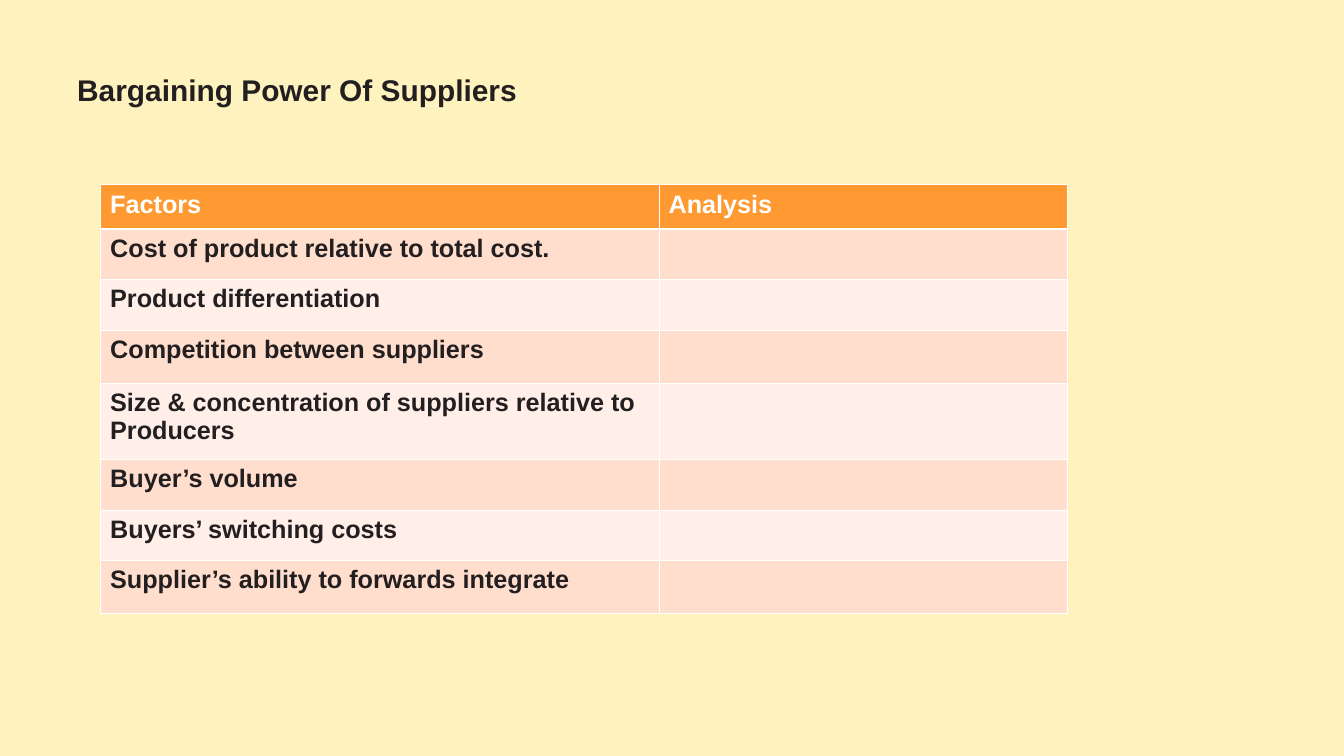
from dataclasses import dataclass

from lxml.etree import SubElement
from pptx import Presentation
from pptx.dml.color import RGBColor
from pptx.enum.text import MSO_ANCHOR
from pptx.oxml.ns import qn
from pptx.util import Inches, Pt

TITLE = "Bargaining Power Of Suppliers"
HEADERS = ("Factors", "Analysis")
FACTORS = [
    "Cost of product relative to total cost.",
    "Product differentiation",
    "Competition between suppliers",
    "Size & concentration of suppliers relative to Producers",
    "Buyer’s volume",
    "Buyers’ switching costs",
    "Supplier’s ability to forwards integrate",
]
COLUMN_WIDTHS = (8.31, 6.08)
ROW_HEIGHTS = (0.66, 0.75, 0.75, 0.79, 1.14, 0.75, 0.75, 0.79)
TITLE_AREA = (1.05, 1.04, 17.84, 0.62)
TABLE_ORIGIN = (1.5, 2.75)


@dataclass(frozen=True)
class Theme:
    font: str = "Arial"
    background: str = "FEF2BE"
    ink: str = "231F20"
    white: str = "FFFFFF"
    header: str = "FF9A32"
    bands: tuple = ("FFDECE", "FFEFE8")
    title_size: int = 32
    cell_size: int = 27
    thin_line: int = 1
    thick_line: int = 3


THEME = Theme()


def style_text(frame, size, color):
    for paragraph in frame.paragraphs:
        for span in paragraph.runs:
            span.font.name = THEME.font
            span.font.size = Pt(size)
            span.font.bold = True
            span.font.color.rgb = RGBColor.from_string(color)


def add_borders(cell, top, bottom):
    properties = cell._tc.get_or_add_tcPr()
    widths = {"lnL": THEME.thin_line, "lnR": THEME.thin_line, "lnT": top, "lnB": bottom}
    for index, (side, width) in enumerate(widths.items()):
        line = SubElement(properties, qn(f"a:{side}"), w=str(Pt(width)))
        fill = SubElement(line, qn("a:solidFill"))
        SubElement(fill, qn("a:srgbClr"), val=THEME.white)
        properties.insert(index, line)


def fill_cell(cell, text, row):
    is_header = row == 0
    fill = THEME.header if is_header else THEME.bands[(row - 1) % 2]
    cell.fill.solid()
    cell.fill.fore_color.rgb = RGBColor.from_string(fill)
    cell.margin_left = cell.margin_right = Inches(0.14)
    cell.margin_top = cell.margin_bottom = Inches(0.08)
    if text:
        cell.text_frame.text = text
        style_text(cell.text_frame, THEME.cell_size, THEME.white if is_header else THEME.ink)
    add_borders(
        cell,
        top=THEME.thick_line if row == 1 else THEME.thin_line,
        bottom=THEME.thick_line if is_header else THEME.thin_line,
    )


def add_title(page):
    box = page.shapes.add_textbox(*map(Inches, TITLE_AREA))
    frame = box.text_frame
    frame.word_wrap = True
    frame.vertical_anchor = MSO_ANCHOR.BOTTOM
    frame.text = TITLE
    frame.paragraphs[0].line_spacing = 0.9
    style_text(frame, THEME.title_size, THEME.ink)


def add_factor_table(page):
    rows = [HEADERS] + [(factor, "") for factor in FACTORS]
    size = (sum(COLUMN_WIDTHS), sum(ROW_HEIGHTS))
    table = page.shapes.add_table(
        len(rows), len(HEADERS), *map(Inches, TABLE_ORIGIN + size)
    ).table
    for column, width in zip(table.columns, COLUMN_WIDTHS):
        column.width = Inches(width)
    for row, (texts, height) in enumerate(zip(rows, ROW_HEIGHTS)):
        table.rows[row].height = Inches(height)
        for column, text in enumerate(texts):
            fill_cell(table.cell(row, column), text, row)


def main():
    deck = Presentation()
    deck.slide_width, deck.slide_height = Inches(20), Inches(11.25)
    page = deck.slides.add_slide(deck.slide_layouts[6])
    page.background.fill.solid()
    page.background.fill.fore_color.rgb = RGBColor.from_string(THEME.background)
    add_title(page)
    add_factor_table(page)
    deck.save("out.pptx")


if __name__ == "__main__":
    main()
